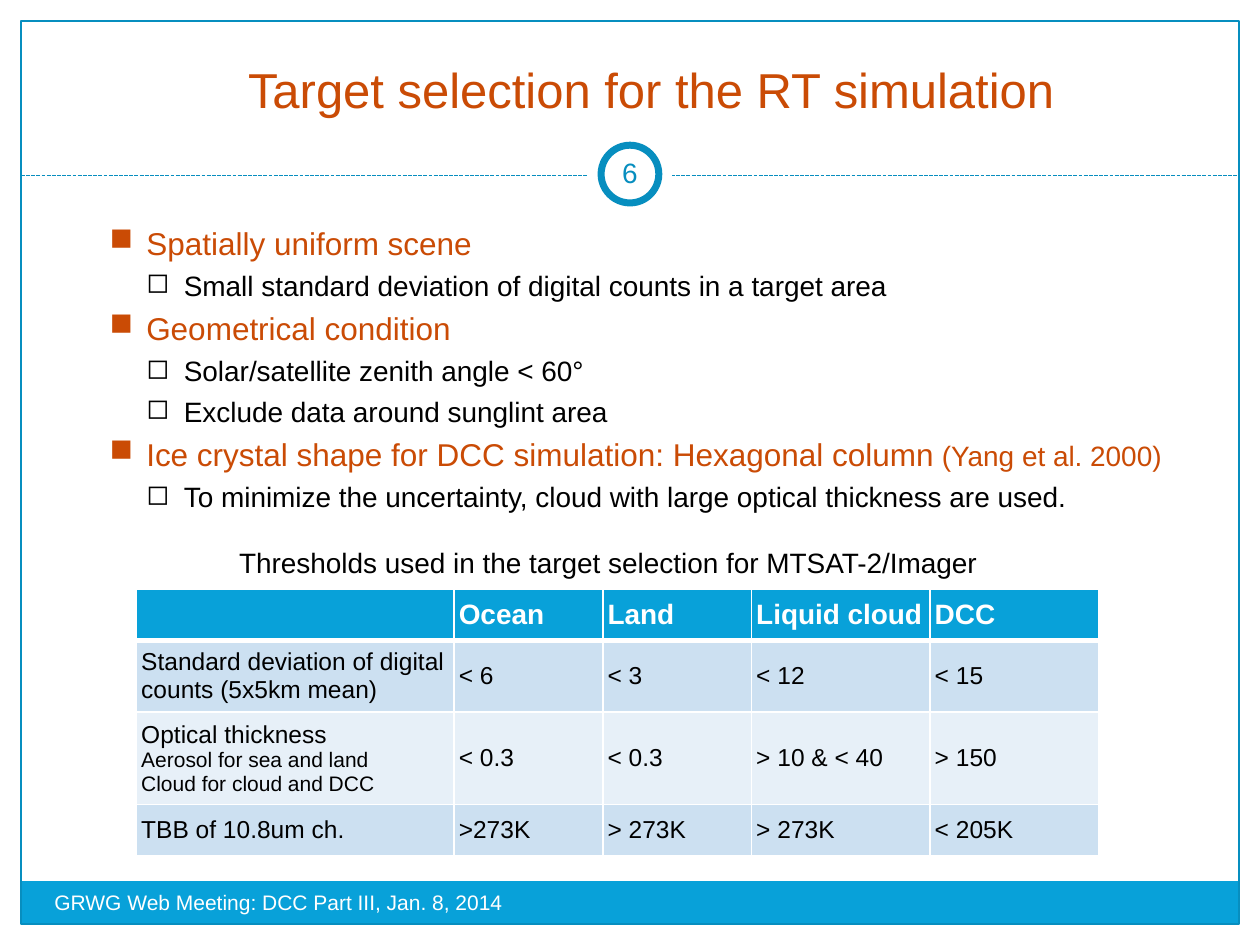
from lxml.etree import SubElement
from pptx import Presentation
from pptx.dml.color import RGBColor
from pptx.enum.dml import MSO_LINE
from pptx.enum.shapes import MSO_CONNECTOR, MSO_SHAPE
from pptx.enum.text import MSO_ANCHOR, PP_ALIGN
from pptx.oxml.ns import qn
from pptx.util import Pt

FONT = "Arial"
WHITE = RGBColor(0xFF, 0xFF, 0xFF)
BLACK = RGBColor(0, 0, 0)
RUST = RGBColor(0xCA, 0x4B, 0x05)
BLUE = RGBColor(0x08, 0xA1, 0xD9)
DARK_BLUE = RGBColor(0x07, 0x8E, 0xBF)
BANDS = [RGBColor(0xCC, 0xE0, 0xF1), RGBColor(0xE7, 0xF0, 0xF8)]

TITLE = "Target selection for the RT simulation"
FOOTER = "GRWG Web Meeting: DCC Part III, Jan. 8, 2014"
PAGE_NUMBER = "6"
CAPTION = "Thresholds used in the target selection for MTSAT-2/Imager"

# (level, text, smaller ending)
CRITERIA = [
    (0, "Spatially uniform scene", ""),
    (1, "Small standard deviation of digital counts in a target area", ""),
    (0, "Geometrical condition", ""),
    (1, "Solar/satellite zenith angle < 60°", ""),
    (1, "Exclude data around sunglint area", ""),
    (0, "Ice crystal shape for DCC simulation: Hexagonal column", " (Yang et al. 2000)"),
    (1, "To minimize the uncertainty, cloud with large optical thickness are used.", ""),
]
# bullet, left margin, hanging indent, size, colour
LEVELS = [("■", 21, 21, 18, RUST), ("◻", 42.5, 21.5, 16, BLACK)]

THRESHOLDS = [
    ["", "Ocean", "Land", "Liquid cloud", "DCC"],
    ["Standard deviation of digital counts (5x5km mean)", "< 6", "< 3", "< 12", "< 15"],
    ["Optical thickness\nAerosol for sea and land\nCloud for cloud and DCC",
     "< 0.3", "< 0.3", "> 10 & < 40", "> 150"],
    ["TBB of 10.8um ch.", ">273K", "> 273K", "> 273K", "< 205K"],
]
COLUMN_WIDTHS = [181.5, 85, 85, 102, 96.5]
ROW_HEIGHTS = [29.5, 38.5, 50, 29.5]


def style(font, size, color, bold=False):
    font.name, font.size, font.bold = FONT, Pt(size), bold
    font.color.rgb = color


def add_panel(slide, kind, box, fill=None, line=None, width=0.75):
    panel = slide.shapes.add_shape(kind, *map(Pt, box))
    panel.shadow.inherit = False
    if fill is None:
        panel.fill.background()
    else:
        panel.fill.solid()
        panel.fill.fore_color.rgb = fill
    if line is None:
        panel.line.fill.background()
    else:
        panel.line.color.rgb = line
        panel.line.width = Pt(width)


def add_label(slide, box, text, size, color, align=PP_ALIGN.LEFT,
              anchor=MSO_ANCHOR.TOP, wrap=True):
    frame = slide.shapes.add_textbox(*map(Pt, box)).text_frame
    frame.word_wrap = wrap
    frame.vertical_anchor = anchor
    frame.text = text
    frame.paragraphs[0].alignment = align
    style(frame.paragraphs[0].font, size, color)
    return frame


def add_frame(slide):
    """Border, footer band, dashed rule and the ring for the page number."""
    add_panel(slide, MSO_SHAPE.RECTANGLE, (12, 503.5, 695.5, 24.5), BLUE)
    add_panel(slide, MSO_SHAPE.RECTANGLE, (12, 12, 696, 516), line=DARK_BLUE)
    rule = slide.shapes.add_connector(
        MSO_CONNECTOR.STRAIGHT, Pt(12), Pt(100.5), Pt(708), Pt(100.5))
    rule.line.color.rgb = DARK_BLUE
    rule.line.width = Pt(0.75)
    rule.line.dash_style = MSO_LINE.SQUARE_DOT
    SubElement(rule._element.spPr, qn("a:effectLst"))
    add_panel(slide, MSO_SHAPE.OVAL, (336, 75.5, 48, 48), WHITE)
    add_panel(slide, MSO_SHAPE.OVAL, (343.5, 83, 33, 33), WHITE, DARK_BLUE, 4)


def add_criteria(slide):
    frame = slide.shapes.add_textbox(Pt(55.5), Pt(120), Pt(622), Pt(178.5)).text_frame
    frame.word_wrap = False
    for i, (level, text, ending) in enumerate(CRITERIA):
        bullet, margin, hanging, size, color = LEVELS[level]
        item = frame.add_paragraph() if i else frame.paragraphs[0]
        item.line_spacing = 1.2
        properties = item._p.get_or_add_pPr()
        properties.set("marL", str(Pt(margin)))
        properties.set("indent", str(-Pt(hanging)))
        SubElement(properties, qn("a:buChar"), char=bullet)
        for part, part_size in ((text, size), (ending, 16)):
            if part:
                run = item.add_run()
                run.text = part
                style(run.font, part_size, color)


def set_borders(cell, top, bottom):
    """White cell borders; must run before the cell gets its fill."""
    properties = cell._tc.get_or_add_tcPr()
    for side, width in (("L", 1), ("R", 1), ("T", top), ("B", bottom)):
        border = SubElement(properties, qn(f"a:ln{side}"), w=str(Pt(width)))
        SubElement(SubElement(border, qn("a:solidFill")), qn("a:srgbClr"), val=str(WHITE))


def add_thresholds(slide):
    table = slide.shapes.add_table(
        len(ROW_HEIGHTS), len(COLUMN_WIDTHS), Pt(78), Pt(336.5),
        Pt(sum(COLUMN_WIDTHS)), Pt(sum(ROW_HEIGHTS))).table
    for column, width in zip(table.columns, COLUMN_WIDTHS):
        column.width = Pt(width)
    for r, (row, height) in enumerate(zip(table.rows, ROW_HEIGHTS)):
        row.height = Pt(height)
        header = r == 0
        for cell, text in zip(row.cells, THRESHOLDS[r]):
            set_borders(cell, top=3 if r == 1 else 1, bottom=3 if header else 1)
            cell.fill.solid()
            cell.fill.fore_color.rgb = BLUE if header else BANDS[(r - 1) % 2]
            cell.vertical_anchor = MSO_ANCHOR.MIDDLE
            cell.margin_left = cell.margin_right = Pt(2.7)
            cell.margin_top = cell.margin_bottom = Pt(3.6)
            cell.text_frame.text = text
            for i, paragraph in enumerate(cell.text_frame.paragraphs):
                size = 16 if header else 12 if i else 14
                style(paragraph.font, size, WHITE if header else BLACK, header)


def main():
    deck = Presentation()
    deck.slide_width, deck.slide_height = Pt(720), Pt(540)
    slide = deck.slides.add_slide(deck.slide_layouts[6])
    add_frame(slide)
    add_label(slide, (24, 504.5, 282, 29), FOOTER, 12, WHITE)
    number = add_label(slide, (342, 81.5, 36, 34.5), PAGE_NUMBER, 16, DARK_BLUE,
                       PP_ALIGN.CENTER, MSO_ANCHOR.MIDDLE)
    number.margin_left = number.margin_right = Pt(3.6)
    add_label(slide, (36, 21, 672, 60), TITLE, 28, RUST,
              PP_ALIGN.CENTER, MSO_ANCHOR.MIDDLE)
    add_thresholds(slide)
    add_label(slide, (129.5, 308, 442, 26.5), CAPTION, 16, BLACK, wrap=False)
    add_criteria(slide)
    deck.save("out.pptx")


if __name__ == "__main__":
    main()
